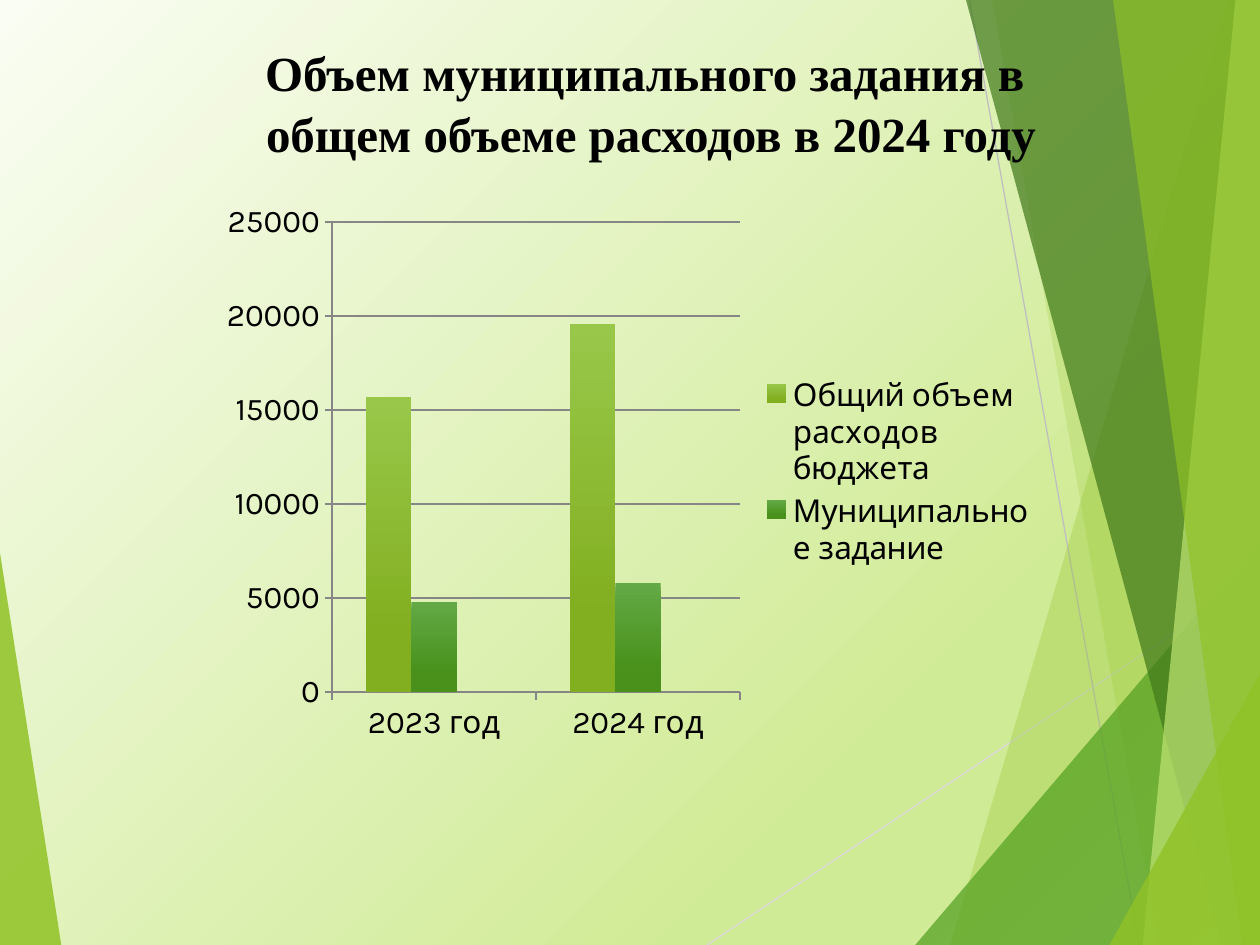
"""Slide with a column chart of municipal spending on a faceted green background."""
import copy

import pptx
import pptx.chart.data
import pptx.dml.color
import pptx.enum.chart
import pptx.enum.shapes
import pptx.enum.text
import pptx.oxml
import pptx.oxml.ns
import pptx.util

Pt = pptx.util.Pt
RGB = pptx.dml.color.RGBColor
BLACK = RGB(0x00, 0x00, 0x00)
LIME = RGB(0x90, 0xC2, 0x26)
GREEN = RGB(0x54, 0xA0, 0x21)
FOREST = RGB(0x3F, 0x78, 0x19)
PALE = RGB(0xC0, 0xE4, 0x74)
SILVER = RGB(0xD9, 0xD9, 0xD9)
GRAY = RGB(0xBF, 0xBF, 0xBF)
AXIS = RGB(0x86, 0x86, 0x86)
BACKGROUND = [
    (0, RGB(0xFA, 0xFD, 0xF3)),
    (0.74, RGB(0xD0, 0xEB, 0x96)),
    (0.83, RGB(0xD0, 0xEB, 0x96)),
    (1, RGB(0xDF, 0xF1, 0xB9)),
]
LIME_BAR = [(0, RGB(0x98, 0xC7, 0x4A)), (0.8, RGB(0x82, 0xAF, 0x20))]
GREEN_BAR = [(0, RGB(0x63, 0xA9, 0x46)), (0.8, RGB(0x49, 0x91, 0x1B))]
W, H = 720, 540


class Deck:
    """Holds the style and the current slide."""

    title_font = "Times New Roman"
    chart_font = "Karla"

    def __init__(self):
        self.prs = pptx.Presentation()
        self.prs.slide_width, self.prs.slide_height = Pt(W), Pt(H)
        self.s = self.prs.slides.add_slide(self.prs.slide_layouts[5])

    def gradient(self, fill, stops, angle):
        fill.gradient()
        fill.gradient_angle = angle
        for stop, (position, color) in zip(fill.gradient_stops, stops):
            stop.position = position
            stop.color.rgb = color

    def background(self, stops):
        fill = self.s.background.fill
        fill.gradient()
        gs_list = next(self.s.element.iter(pptx.oxml.ns.qn("a:gsLst")))
        for _ in stops[2:]:
            gs_list.append(copy.deepcopy(gs_list[-1]))
        fill.gradient_angle = 315
        for stop, (position, color) in zip(fill.gradient_stops, stops):
            stop.position = position
            stop.color.rgb = color

    def facet(self, points, color, opacity):
        (x, y), *rest = [(Pt(px), Pt(py)) for px, py in points]
        builder = self.s.shapes.build_freeform(x, y)
        builder.add_line_segments(rest, close=True)
        sp = builder.convert_to_shape()
        sp.shadow.inherit = False
        sp.fill.solid()
        sp.fill.fore_color.rgb = color
        sp.line.fill.background()
        clr = next(sp.element.spPr.iter(pptx.oxml.ns.qn("a:srgbClr")))
        alpha = clr.makeelement(pptx.oxml.ns.qn("a:alpha"), {"val": str(opacity * 1000)})
        clr.append(alpha)

    def line(self, x1, y1, x2, y2, color):
        c = self.s.shapes.add_connector(
            pptx.enum.shapes.MSO_CONNECTOR.STRAIGHT, Pt(x1), Pt(y1), Pt(x2), Pt(y2))
        c.line.color.rgb = color
        c.line.width = Pt(0.75)
        sp_pr = c.element.spPr
        sp_pr.append(sp_pr.makeelement(pptx.oxml.ns.qn("a:effectLst"), {}))

    def title(self, lines, x, y, w, h):
        sp = self.s.shapes.title
        sp.left, sp.top, sp.width, sp.height = Pt(x), Pt(y), Pt(w), Pt(h)
        sp.element.getparent().append(sp.element)
        tf = sp.text_frame
        tf.word_wrap = True
        tf.auto_size = pptx.enum.text.MSO_AUTO_SIZE.NONE
        tf.vertical_anchor = pptx.enum.text.MSO_ANCHOR.TOP
        tf.margin_top = Pt(6)
        tf.text = "\n".join(lines)
        for p in tf.paragraphs:
            p.alignment = pptx.enum.text.PP_ALIGN.CENTER
            p.font.name = self.title_font
            p.font.size = Pt(28)
            p.font.bold = True
            p.font.color.rgb = BLACK
        tf.paragraphs[-1].space_before = Pt(1.5)

    def chart(self, categories, series, x, y, w, h):
        data = pptx.chart.data.CategoryChartData()
        data.categories = categories
        for name, values, _ in series:
            data.add_series(name, values)
        chart = self.s.shapes.add_chart(
            pptx.enum.chart.XL_CHART_TYPE.COLUMN_CLUSTERED,
            Pt(x), Pt(y), Pt(w), Pt(h), data).chart
        chart.has_title = False
        chart.font.name = self.chart_font
        chart.font.size = Pt(18)
        chart.font.color.rgb = BLACK
        plot = chart.plots[0]
        plot.vary_by_categories = False
        plot.gap_width = 150
        plot.overlap = 0
        for ser, (_, _, stops) in zip(plot.series, series):
            if stops:
                self.gradient(ser.format.fill, stops, 270)
        value_axis = chart.value_axis
        value_axis.minimum_scale = 0
        value_axis.maximum_scale = 25000
        value_axis.major_unit = 5000
        value_axis.has_major_gridlines = True
        value_axis.tick_labels.number_format = "General"
        value_axis.tick_labels.number_format_is_linked = False
        for part in (value_axis, chart.category_axis, value_axis.major_gridlines):
            part.format.line.color.rgb = AXIS
            part.format.line.width = Pt(1)
        for axis in (value_axis, chart.category_axis):
            axis.major_tick_mark = pptx.enum.chart.XL_TICK_MARK.OUTSIDE
        self.legend(chart, [i for i, item in enumerate(series) if not item[2]])

    def legend(self, chart, hidden):
        chart.has_legend = True
        chart.legend.position = pptx.enum.chart.XL_LEGEND_POSITION.RIGHT
        chart.legend.include_in_layout = False
        position = next(chart.element.iter(pptx.oxml.ns.qn("c:legendPos"))) \
            if hasattr(chart, "element") else chart._chartSpace.xpath("//c:legendPos")[0]
        for index in hidden:
            position.addnext(pptx.oxml.parse_xml(
                f'<c:legendEntry {pptx.oxml.ns.nsdecls("c")}>'
                f'<c:idx val="{index}"/><c:delete val="1"/></c:legendEntry>'))


def main():
    deck = Deck()
    deck.background(BACKGROUND)
    deck.facet([(0, 316), (35, H), (0, H)], LIME, 85)
    deck.line(404, H, W, 329, SILVER)
    deck.line(554, 0, 651, H, GRAY)
    for top, bottom, color, opacity in [
        ((702, 0), (543, H), LIME, 30),
        ((567, 0), (662, H), LIME, 20),
        ((W, 309), (523, H), GREEN, 72),
        ((552, 0), (698, H), FOREST, 70),
        ((706, 0), (653, H), PALE, 70),
        ((636, 0), (710, H), LIME, 65),
        ((W, 385), (634, H), LIME, 80),
    ]:
        deck.facet([top, bottom, (W, H), (W, top[1])], color, opacity)
    deck.chart(
        ["2023 год", "2024 год"],
        [
            ("Общий объем расходов бюджета", [15700, 19600], LIME_BAR),
            ("Муниципальное задание", [4800, 5800], GREEN_BAR),
            ("Series 3", [None, None], None),
        ],
        120, 110, 480, 320)
    deck.title(
        ["Объем муниципального задания в ", "общем объеме расходов в 2024 году"],
        48, 18, 648, 90)
    deck.prs.save("out.pptx")


if __name__ == "__main__":
    main()
